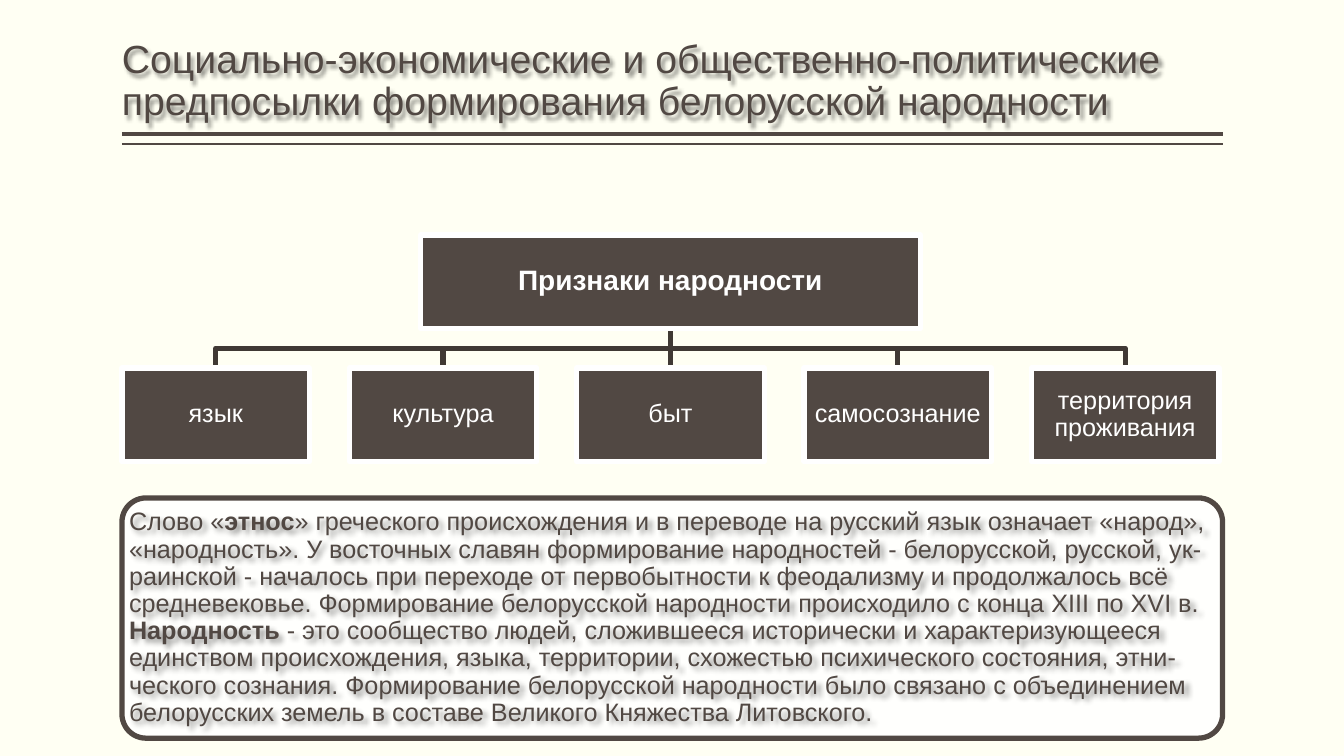
"""Build a slide on the features of a nationality and how the Belarusian one formed."""
from lxml.etree import SubElement
from pptx import Presentation
from pptx.dml.color import RGBColor as RGB
from pptx.enum.shapes import MSO_CONNECTOR as CONN, MSO_SHAPE as SHAPE
from pptx.enum.text import MSO_ANCHOR as ANCHOR, PP_ALIGN as ALIGN
from pptx.oxml import parse_xml
from pptx.oxml.ns import nsdecls, qn
from pptx.util import Pt

THEME = {
    "bg": RGB.from_string("FFFFF3"), "brown": RGB.from_string("514843"),
    "link": RGB.from_string("403934"), "white": RGB.from_string("FFFFFF"),
    "font": "Arial", "title": Pt(28), "head": Pt(20), "body": Pt(18), "line": Pt(3.78),
}
SHADOW = (f'<a:effectLst {nsdecls("a")}><a:outerShdw blurRad="38100" dist="38100" dir="2700000">'
          '<a:srgbClr val="000000"><a:alpha val="43000"/></a:srgbClr></a:outerShdw></a:effectLst>')


def write(sp, runs, size, color, frame, align=ALIGN.LEFT):
    """Fill one paragraph with (text, bold) runs."""
    tf = sp.text_frame
    for name, value in {"word_wrap": True, **frame}.items():
        setattr(tf, name, value)
    p = tf.paragraphs[0]
    p.alignment, p.line_spacing = align, 0.9
    for text, bold in runs:
        r = p.add_run()
        r.text = text
        for name, value in {"name": THEME["font"], "size": size, "bold": bold}.items():
            setattr(r.font, name, value)
        r.font.color.rgb = color


def add_box(kind, left, top, width, height, fill, line):
    """Add a filled, outlined shape without a shadow."""
    sp = s.shapes.add_shape(kind, Pt(left), Pt(top), Pt(width), Pt(height))
    sp.shadow.inherit = False
    sp.fill.solid()
    sp.fill.fore_color.rgb = fill
    sp.line.color.rgb, sp.line.width = line, THEME["line"]
    return sp


prs = Presentation()
prs.slide_width, prs.slide_height = Pt(960), Pt(540)
s = prs.slides.add_slide(prs.slide_layouts[5])
s.background.fill.solid()
s.background.fill.fore_color.rgb = THEME["bg"]

LEFT, WIDTH = 87.1, 786.2
title = s.shapes.title
for name, value in {"left": LEFT, "top": 5.8, "width": WIDTH, "height": 86.4}.items():
    setattr(title, name, Pt(value))
title.fill.background()
title._element.spPr.append(parse_xml(SHADOW))
write(title, [("Социально-экономические и общественно-политические предпосылки "
               "формирования белорусской народности", False)],
      THEME["title"], THEME["brown"],
      {"vertical_anchor": ANCHOR.BOTTOM, "margin_left": 0, "margin_right": 0,
       "margin_top": Pt(3.6), "margin_bottom": Pt(3.6)})

for y, weight in ((95.8, 3), (102.8, 1)):
    rule = s.shapes.add_connector(CONN.STRAIGHT, Pt(LEFT), Pt(y), Pt(LEFT + WIDTH), Pt(y))
    rule.line.color.rgb, rule.line.width = THEME["brown"], Pt(weight)
    SubElement(rule._element.spPr, qn("a:effectLst"))

panel = add_box(SHAPE.ROUNDED_RECTANGLE, LEFT, 355.7, WIDTH, 171.6, THEME["white"], THEME["brown"])
panel.adjustments[0] = 0.1
panel_color = panel._element.spPr.find(qn("a:solidFill"))[0]
SubElement(panel_color, qn("a:alpha")).set("val", "90000")

note = s.shapes.add_textbox(Pt(89.5), Pt(360.7), Pt(781.6), Pt(161.4))
note.fill.background()
note._element.spPr.append(parse_xml(SHADOW))
write(note, [
    ("Слово «", False), ("этнос", True),
    ("» греческого происхождения и в переводе на русский язык означает «народ», «народность». "
     "У восточных славян формирование народностей - белорусской, русской, ук- раинской - "
     "началось при переходе от первобытности к феодализму и продолжалось всё средневековье. "
     "Формирование белорусской народности происходило с конца XIII по XVI в. ", False),
    ("Народность", True),
    (" - это сообщество людей, сложившееся исторически и характеризующееся единством "
     "происхождения, языка, территории, схожестью психического состояния, этни- ческого "
     "сознания. Формирование белорусской народности было связано с объединением белорусских "
     "земель в составе Великого Княжества Литовского.", False),
], THEME["body"], THEME["brown"],
    {"vertical_anchor": ANCHOR.MIDDLE, "margin_left": Pt(2.7), "margin_right": Pt(2.7),
     "margin_top": Pt(1.4), "margin_bottom": Pt(1.4)})

FEATURES = ["язык", "культура", "быт", "самосознание", "территория проживания"]
BOX_W, BOX_H, PITCH, HEAD_W = 134, 67, 162.4, 357
HEAD_TOP, ROW_TOP = 167.8, 262.8
HEAD_BOTTOM = HEAD_TOP + BOX_H
BUS = (HEAD_BOTTOM + ROW_TOP) / 2
lefts = [LEFT + i * PITCH for i in range(len(FEATURES))]
middle = len(FEATURES) // 2
axis = lefts[middle] + BOX_W / 2

for i, left in enumerate(lefts):
    if i == middle:
        continue
    x = left + BOX_W / 2
    branch = s.shapes.build_freeform(Pt(axis), Pt(HEAD_BOTTOM))
    branch.add_line_segments([(Pt(axis), Pt(BUS)), (Pt(x), Pt(BUS)), (Pt(x), Pt(ROW_TOP))],
                             close=False)
    sp = branch.convert_to_shape()
    sp.shadow.inherit = False
    sp.fill.background()
    sp.line.color.rgb, sp.line.width = THEME["link"], THEME["line"]

stem = s.shapes.add_connector(CONN.STRAIGHT, Pt(axis), Pt(HEAD_BOTTOM), Pt(axis), Pt(ROW_TOP))
stem.line.color.rgb, stem.line.width = THEME["link"], THEME["line"]
SubElement(stem._element.spPr, qn("a:effectLst"))

label = {"vertical_anchor": ANCHOR.MIDDLE, "margin_left": Pt(0.9), "margin_right": Pt(0.9),
         "margin_top": Pt(0.9), "margin_bottom": Pt(0.9)}
nodes = [("Признаки народности", axis - HEAD_W / 2, HEAD_TOP, HEAD_W, THEME["head"], True)]
nodes += [(text, left, ROW_TOP, BOX_W, THEME["body"], False)
          for text, left in zip(FEATURES, lefts)]
boxes = []
for text, left, top, width, size, bold in nodes:
    sp = add_box(SHAPE.RECTANGLE, left, top, width, BOX_H, THEME["brown"], THEME["white"])
    write(sp, [(text, bold)], size, THEME["white"], label, ALIGN.CENTER)
    boxes.append(sp)
stem.begin_connect(boxes[0], 2)
stem.end_connect(boxes[1 + middle], 0)

prs.save("out.pptx")
